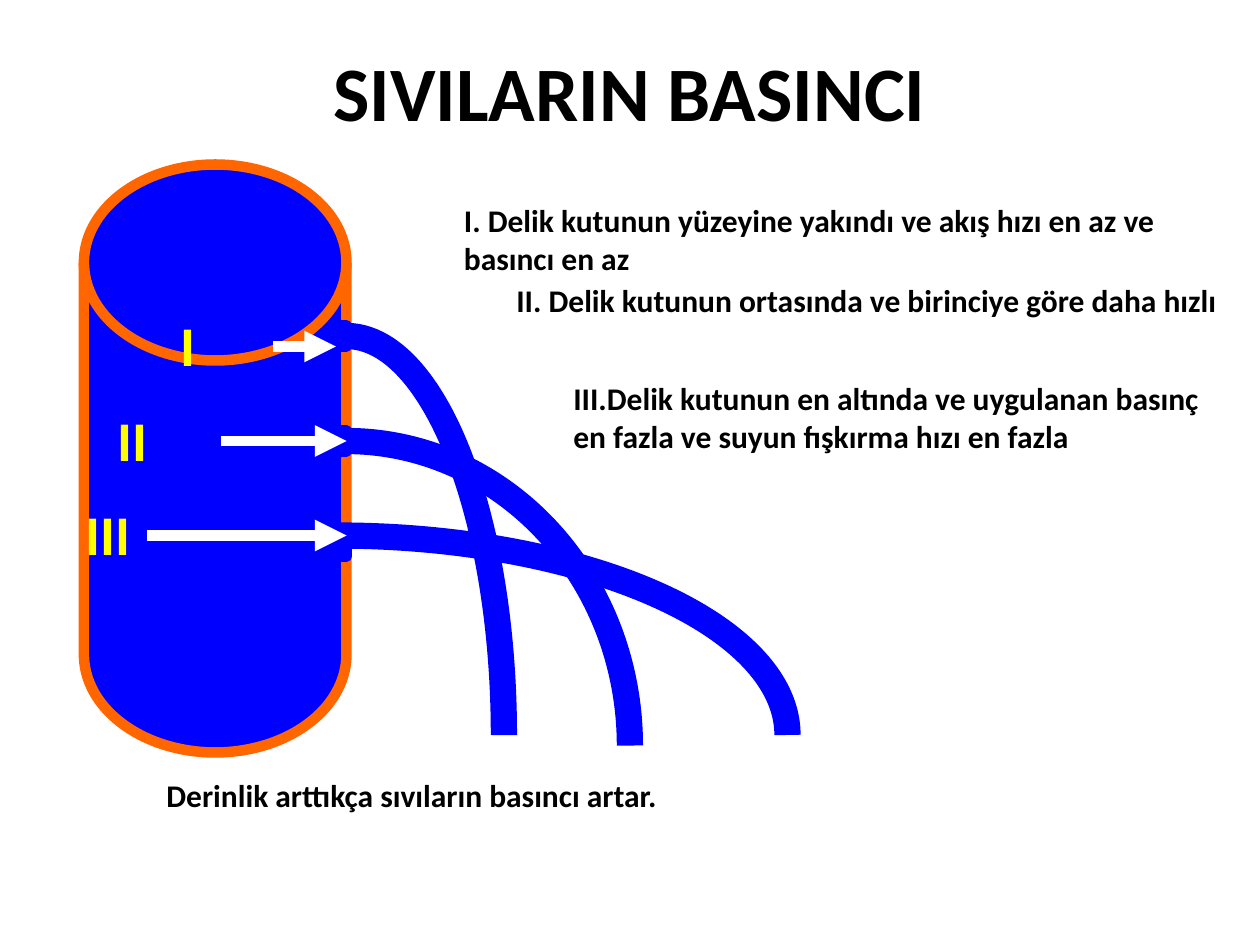
from pptx import Presentation
from pptx.dml.color import RGBColor
from pptx.enum import shapes as sh, text as tx
from pptx.oxml import ns, xmlchemy as xc
from pptx.util import Pt

BLUE = RGBColor(0x00, 0x00, 0xFF)
ORANGE = RGBColor(0xFF, 0x66, 0x00)
STEEL = RGBColor(0x4F, 0x81, 0xBD)
WHITE = RGBColor(0xFF, 0xFF, 0xFF)
YELLOW = RGBColor(0xFF, 0xFF, 0x00)
BLACK = RGBColor(0x00, 0x00, 0x00)

TITLE = "SIVILARIN BASINCI"
NOTES = [
    ("I. Delik kutunun yüzeyine yakındı ve akış hızı en az ve basıncı en az",
     (258, 111.5, 420, 65)),
    ("II. Delik kutunun ortasında ve birinciye göre daha hızlı",
     (288, 157, 432, 65)),
    ("III.Delik kutunun en altında ve uygulanan basınç en fazla ve suyun fışkırma hızı en fazla",
     (320.5, 213, 372, 51)),
    ("Derinlik arttıkça sıvıların basıncı artar.", (88, 440, 544, 29)),
]
CYLINDER = (48, 94, 150, 336)
HOLE_TOPS = (186, 246, 306)
JETS = [
    ((198, 192), (288, 420)),
    ((198, 252), (360, 426)),
    ((192, 306), (450, 420)),
]
ARROWS = [
    ("I", (96, 174, 30, 45), (156, 192), 198),
    ("II", (60, 228, 42, 45), (126, 198), 252),
    ("III", (42, 282, 66, 45), (84, 198), 306),
]

def points(*values):
    return [Pt(value) for value in values]


def apply(target, formats):
    for name, value in formats.items():
        setattr(target, name, value)


def style_text(frame, wording, size, color, align=tx.PP_ALIGN.LEFT):
    apply(frame, {"text": wording, "word_wrap": True,
                  "vertical_anchor": tx.MSO_ANCHOR.TOP})
    paragraph = frame.paragraphs[0]
    paragraph.alignment = align
    font = paragraph.runs[0].font
    apply(font, {"name": "Calibri", "size": Pt(size), "bold": True})
    font.color.rgb = color


def add_text(parent, wording, box, size, color):
    style_text(parent.add_textbox(*points(*box)).text_frame, wording, size, color)


def add_outlined(parent, kind, box, fill, line, width):
    part = parent.add_shape(kind, *points(*box))
    part.shadow.inherit = False
    if fill is None:
        part.fill.background()
    else:
        part.fill.solid()
        part.fill.fore_color.rgb = fill
    part.line.color.rgb = line
    part.line.width = Pt(width)


def add_arrow(parent, start, end, y):
    arrow = parent.add_connector(sh.MSO_CONNECTOR.STRAIGHT, *points(start, y, end, y))
    arrow.line.color.rgb = WHITE
    arrow.line.width = Pt(6)
    head = xc.OxmlElement("a:tailEnd")
    head.set("type", "triangle")
    properties = arrow.element.find(ns.qn("p:spPr"))
    properties.find(ns.qn("a:ln")).append(head)
    properties.append(xc.OxmlElement("a:effectLst"))


deck = Presentation()
apply(deck, {"slide_width": Pt(720), "slide_height": Pt(540)})
slide = deck.slides.add_slide(deck.slide_layouts[5])
parts = slide.shapes

apply(parts.title, dict(zip(("left", "top", "width", "height"),
                            points(36, 21.6, 648, 90))))
style_text(parts.title.text_frame, TITLE, 44, BLACK, tx.PP_ALIGN.CENTER)

add_outlined(parts, sh.MSO_SHAPE.FLOWCHART_MAGNETIC_DISK, CYLINDER, BLUE, ORANGE, 6)
for top in HOLE_TOPS:
    add_outlined(parts, sh.MSO_SHAPE.RECTANGLE, (192, top, 6, 12), STEEL, BLUE, 6)

for (x, y), (end_x, end_y) in JETS:
    reach, drop = end_x - x, end_y - y
    add_outlined(parts, sh.MSO_SHAPE.ARC, (x - reach, y, 2 * reach, 2 * drop),
                 None, BLUE, 15)

for numeral, box, (start, end), y in ARROWS:
    pair = parts.add_group_shape().shapes
    add_arrow(pair, min(start, end), 192 if numeral == "I" else end, y)
    add_text(pair, numeral, box, 32, YELLOW)

for wording, box in NOTES:
    add_text(parts, wording, box, 18, BLACK)

deck.save("out.pptx")
